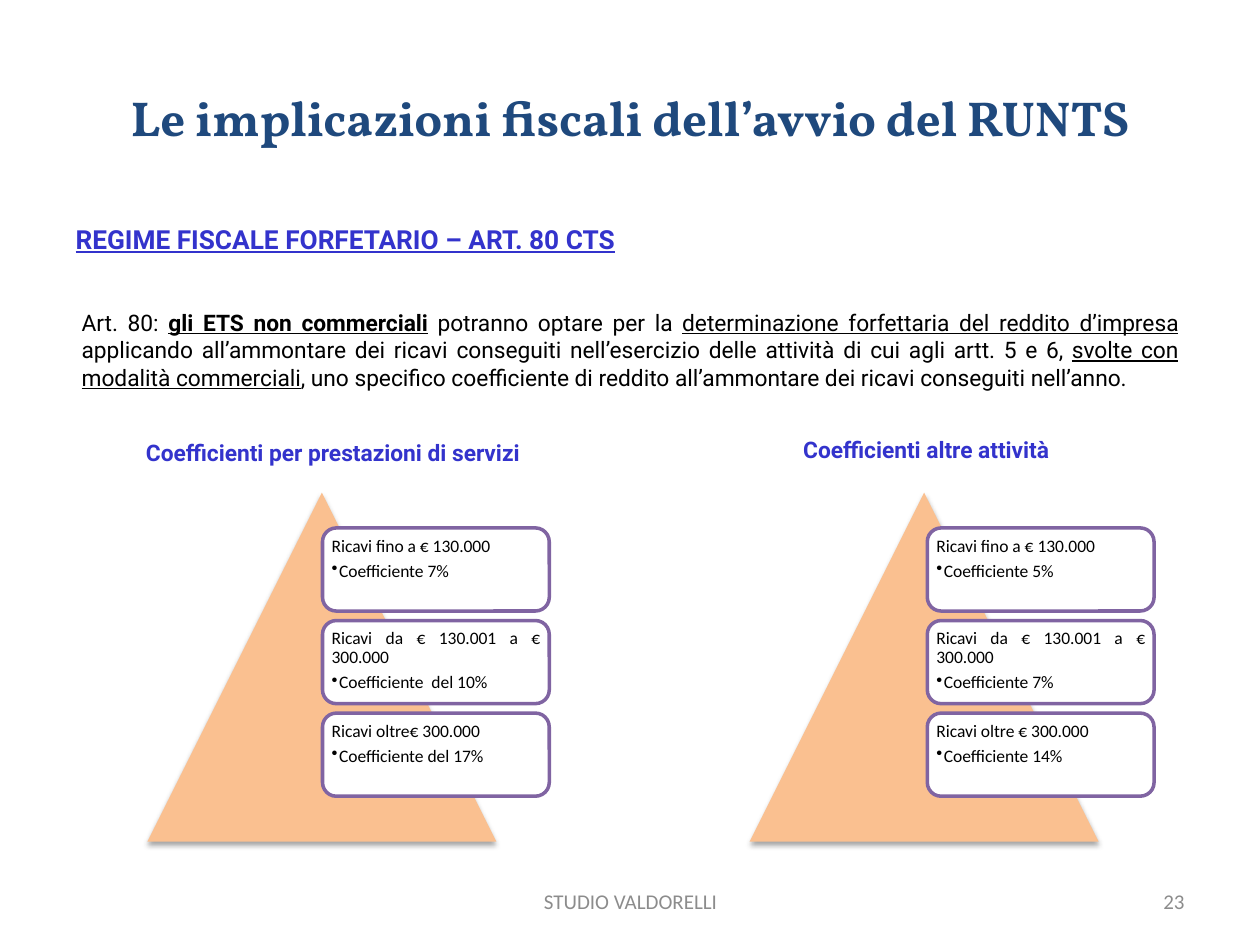
"""Build the slide on the flat-rate tax regime of art. 80 CTS."""
from dataclasses import dataclass

from lxml.etree import SubElement
from pptx import Presentation
from pptx.dml.color import RGBColor
from pptx.enum.shapes import MSO_SHAPE as Shape
from pptx.enum.text import MSO_ANCHOR as Anchor, PP_ALIGN as Align
from pptx.oxml import parse_xml
from pptx.oxml.ns import nsdecls, qn
from pptx.util import Inches, Pt

COLORS = {
    "title": "1F497D",
    "heading": "3333CC",
    "text": "000000",
    "footer": "8C8C8C",
    "triangle": "FAC090",
    "card": "FFFFFF",
    "border": "8064A2",
}
TRIANGLE_TOP, TRIANGLE_SIZE = 3.91, 2.77
CARD_TOP, CARD_PITCH, CARD_WIDTH, CARD_HEIGHT = 4.19, 0.735, 1.8, 0.66


@dataclass(frozen=True)
class Style:
    font: str
    size: float
    color: str
    bold: bool = False
    underline: bool = False


@dataclass(frozen=True)
class Bracket:
    revenue: str
    coefficient: str


@dataclass(frozen=True)
class Pyramid:
    heading: str
    heading_left: float
    heading_top: float
    triangle_left: float
    card_left: float
    brackets: tuple[Bracket, ...]


TITLE = Style("Vollkorn", 28, "title", bold=True)
SECTION = Style("Roboto", 15, "heading", bold=True, underline=True)
HEADING = Style("Roboto", 13, "heading", bold=True)
PLAIN = Style("Roboto", 13, "text")
UNDERLINED = Style("Roboto", 13, "text", underline=True)
STRONG = Style("Roboto", 13, "text", bold=True, underline=True)
CARD = Style("Calibri", 10, "text")
FOOTER = Style("Calibri", 12, "footer")

RULE = (
    ("Art. 80: ", PLAIN),
    ("gli ETS non commerciali", STRONG),
    (" potranno optare per la ", PLAIN),
    ("determinazione forfettaria del reddito d’impresa ", UNDERLINED),
    ("applicando all’ammontare dei ricavi conseguiti nell’esercizio delle "
     "attività di cui agli artt. 5 e 6, ", PLAIN),
    ("svolte con modalità commerciali", UNDERLINED),
    (", uno specifico coefficiente di reddito all’ammontare dei ricavi "
     "conseguiti nell’anno. ", PLAIN),
)
PYRAMIDS = (
    Pyramid("Coefficienti per prestazioni di servizi", 0.87, 3.43, 1.17, 2.56, (
        Bracket("Ricavi fino a € 130.000", "Coefficiente 7%"),
        Bracket("Ricavi da € 130.001 a € 300.000", "Coefficiente  del 10%"),
        Bracket("Ricavi oltre€ 300.000", "Coefficiente del 17%"),
    )),
    Pyramid("Coefficienti altre attività", 5.58, 3.41, 5.95, 7.36, (
        Bracket("Ricavi fino a € 130.000", "Coefficiente 5%"),
        Bracket("Ricavi da € 130.001 a € 300.000", "Coefficiente 7%"),
        Bracket("Ricavi oltre € 300.000", "Coefficiente 14%"),
    )),
)


def rgb(name: str) -> RGBColor:
    return RGBColor.from_string(COLORS[name])


def add_run(paragraph, text: str, style: Style) -> None:
    run = paragraph.add_run()
    run.text = text
    font = run.font
    font.name, font.size = style.font, Pt(style.size)
    font.bold, font.underline = style.bold, style.underline
    font.color.rgb = rgb(style.color)


def place(shape, left: float, top: float, width: float, height: float) -> None:
    shape.left, shape.top = Inches(left), Inches(top)
    shape.width, shape.height = Inches(width), Inches(height)


def add_text(slide, box: tuple, runs: tuple, align: Align, anchor: Anchor = Anchor.TOP) -> None:
    frame = slide.shapes.add_textbox(*map(Inches, box)).text_frame
    frame.word_wrap = True
    frame.vertical_anchor = anchor
    paragraph = frame.paragraphs[0]
    paragraph.alignment = align
    for text, style in runs:
        add_run(paragraph, text, style)


def set_bullet(paragraph, indent: float, character: str = "") -> None:
    properties = paragraph._p.get_or_add_pPr()
    properties.set("marL", str(Inches(indent)))
    properties.set("indent", str(-Inches(indent)))
    if character:
        SubElement(properties, qn("a:buChar")).set("char", character)
    else:
        SubElement(properties, qn("a:buNone"))


def add_triangle(slide, left: float) -> None:
    triangle = slide.shapes.add_shape(
        Shape.ISOSCELES_TRIANGLE, Inches(left), Inches(TRIANGLE_TOP),
        Inches(TRIANGLE_SIZE), Inches(TRIANGLE_SIZE))
    triangle.fill.solid()
    triangle.fill.fore_color.rgb = rgb("triangle")
    triangle.line.fill.background()
    triangle._element.spPr.append(parse_xml(
        f'<a:effectLst {nsdecls("a")}><a:outerShdw blurRad="{Pt(3.1)}" dist="{Pt(1.8)}" '
        'dir="5400000" rotWithShape="0"><a:srgbClr val="000000"><a:alpha val="35000"/>'
        '</a:srgbClr></a:outerShdw></a:effectLst>'))


def add_card(slide, left: float, top: float, bracket: Bracket) -> None:
    card = slide.shapes.add_shape(
        Shape.ROUNDED_RECTANGLE, Inches(left), Inches(top),
        Inches(CARD_WIDTH), Inches(CARD_HEIGHT))
    card.shadow.inherit = False
    card.fill.solid()
    card.fill.fore_color.rgb = rgb("card")
    card.line.color.rgb = rgb("border")
    card.line.width = Pt(2)
    frame = card.text_frame
    frame.word_wrap = True
    frame.vertical_anchor = Anchor.TOP
    frame.margin_left = frame.margin_right = Inches(0.04)
    frame.margin_top = frame.margin_bottom = Inches(0.04)
    revenue, coefficient = frame.paragraphs[0], frame.add_paragraph()
    coefficient.level = 1
    for paragraph, text, space in ((revenue, bracket.revenue, 3.5),
                                   (coefficient, bracket.coefficient, 1.5)):
        paragraph.alignment = Align.JUSTIFY
        paragraph.line_spacing = 0.9
        paragraph.space_after = Pt(space)
        add_run(paragraph, text, CARD)
    set_bullet(coefficient, 0.06, "•")


def add_pyramid(slide, pyramid: Pyramid) -> None:
    add_triangle(slide, pyramid.triangle_left)
    for index, bracket in enumerate(pyramid.brackets):
        add_card(slide, pyramid.card_left, CARD_TOP + index * CARD_PITCH, bracket)
    add_text(slide, (pyramid.heading_left, pyramid.heading_top, 3.54, 0.32),
             ((pyramid.heading, HEADING),), Align.CENTER)


def main() -> None:
    presentation = Presentation()
    presentation.slide_width, presentation.slide_height = Inches(10), Inches(7.5)
    slide = presentation.slides.add_slide(presentation.slide_layouts[1])

    title, body = slide.placeholders
    place(title, 0.5, 0.3, 9, 1.25)
    title.text_frame.vertical_anchor = Anchor.MIDDLE
    paragraph = title.text_frame.paragraphs[0]
    paragraph.alignment = Align.CENTER
    add_run(paragraph, "Le implicazioni fiscali dell’avvio del RUNTS", TITLE)

    place(body, 0.5, 1.75, 9, 4.95)
    paragraph = body.text_frame.paragraphs[0]
    paragraph.alignment = Align.JUSTIFY
    paragraph.line_spacing = 0.9
    paragraph.space_before = Pt(3)
    set_bullet(paragraph, 0)
    add_run(paragraph, "REGIME FISCALE FORFETARIO – ART. 80 CTS", SECTION)

    add_text(slide, (0.55, 2.4, 8.9, 1.19), RULE, Align.JUSTIFY)
    for pyramid in PYRAMIDS:
        add_pyramid(slide, pyramid)
    add_text(slide, (3.42, 6.95, 3.17, 0.4), (("STUDIO VALDORELLI", FOOTER),),
             Align.CENTER, Anchor.MIDDLE)
    add_text(slide, (7.17, 6.95, 2.33, 0.4), (("23", FOOTER),), Align.RIGHT, Anchor.MIDDLE)
    presentation.save("out.pptx")


if __name__ == "__main__":
    main()
